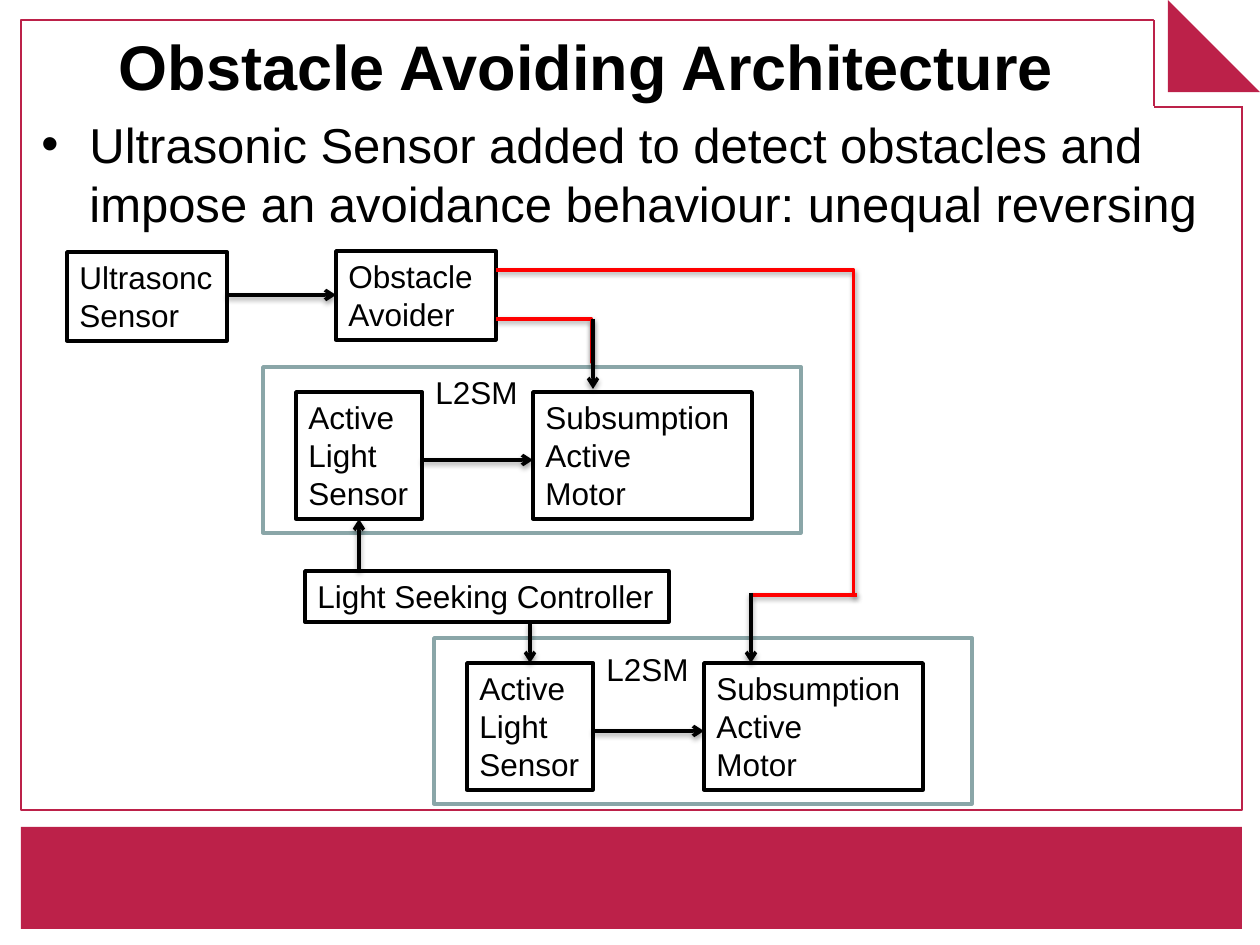
from dataclasses import dataclass

from lxml import etree
from pptx import Presentation
from pptx.dml.color import RGBColor
from pptx.enum.shapes import MSO_CONNECTOR, MSO_SHAPE
from pptx.enum.text import MSO_ANCHOR, MSO_AUTO_SIZE, PP_ALIGN
from pptx.oxml import parse_xml
from pptx.oxml.ns import nsdecls, qn
from pptx.util import Emu, Pt

RECT, CORNER = MSO_SHAPE.RECTANGLE, MSO_SHAPE.RIGHT_TRIANGLE
LINE, ELBOW = MSO_CONNECTOR.STRAIGHT, MSO_CONNECTOR.ELBOW
LEFT, CENTER = PP_ALIGN.LEFT, PP_ALIGN.CENTER
TOP, MIDDLE = MSO_ANCHOR.TOP, MSO_ANCHOR.MIDDLE
GROW, FIXED = MSO_AUTO_SIZE.SHAPE_TO_FIT_TEXT, MSO_AUTO_SIZE.NONE
SCALE = 914400 / 126


def px(n):
    return Emu(round(n * SCALE))


@dataclass(frozen=True)
class Theme:
    font: str = "Arial"
    ink: str = "000000"
    paper: str = "FFFFFF"
    brand: str = "BC2149"
    group: str = "8AA6A8"
    alert: str = "FF0000"
    title: int = 36
    body: int = 28
    label: int = 18
    thin: float = 0.75
    thick: float = 2


class Deck:
    def __init__(self, theme):
        self.theme = theme
        self.file = Presentation()
        self.file.slide_width, self.file.slide_height = px(1260), px(945)
        self.slide = self.file.slides.add_slide(self.file.slide_layouts[5])

    def text(self, frame, lines, size, bold=False, align=LEFT):
        for i, line in enumerate(lines):
            para = frame.paragraphs[0] if i == 0 else frame.add_paragraph()
            para.alignment = align
            run = para.add_run()
            run.text = line
            font = run.font
            font.name, font.size, font.bold = self.theme.font, Pt(size), bold
            font.color.rgb = RGBColor.from_string(self.theme.ink)

    def title(self, text, *at):
        shape = self.slide.shapes.title
        shape.left, shape.top, shape.width, shape.height = map(px, at)
        frame = shape.text_frame
        frame.auto_size, frame.vertical_anchor = FIXED, MIDDLE
        self.text(frame, [text], self.theme.title, True, CENTER)

    def bullet(self, text, *at):
        frame = self.slide.shapes.add_textbox(*map(px, at)).text_frame
        frame.word_wrap = True
        props = frame.paragraphs[0]._p.get_or_add_pPr()
        props.set("marL", str(px(48)))
        props.set("indent", str(-px(48)))
        etree.SubElement(props, qn("a:buFont")).set("typeface", self.theme.font)
        etree.SubElement(props, qn("a:buChar")).set("char", "•")
        self.text(frame, [text], self.theme.body)

    def shape(self, kind, *at, fill=None, line=None, width=Theme.thick):
        shape = self.slide.shapes.add_shape(kind, *map(px, at))
        shape.shadow.inherit = False
        if fill:
            shape.fill.solid()
            shape.fill.fore_color.rgb = RGBColor.from_string(fill)
        else:
            shape.fill.background()
        if line:
            shape.line.color.rgb = RGBColor.from_string(line)
            shape.line.width = Pt(width)
        else:
            shape.line.fill.background()
        return shape

    def fit(self, frame, lines):
        frame.word_wrap, frame.auto_size = False, GROW
        frame.vertical_anchor = TOP
        self.text(frame, lines, self.theme.label)

    def box(self, lines, *at):
        shape = self.shape(RECT, *at, fill=self.theme.paper, line=self.theme.ink)
        self.fit(shape.text_frame, lines)

    def label(self, text, *at):
        self.fit(self.slide.shapes.add_textbox(*map(px, at)).text_frame, [text])

    def line(self, *ends, kind=LINE, color=Theme.ink, width=Theme.thick,
             shade=True, bend=None):
        link = self.slide.shapes.add_connector(kind, *map(px, ends))
        link.line.color.rgb = RGBColor.from_string(color)
        link.line.width = Pt(width)
        props = link._element.spPr
        if bend:
            shape = props.find(qn("a:prstGeom"))
            guide = etree.SubElement(shape.find(qn("a:avLst")), qn("a:gd"))
            guide.set("name", "adj1")
            guide.set("fmla", f"val {bend}")
        shadow = ('<a:outerShdw blurRad="40000" dist="20000" dir="5400000" rotWithShape="0">'
                  f'<a:srgbClr val="{self.theme.ink}"><a:alpha val="38000"/></a:srgbClr>'
                  "</a:outerShdw>") if shade else ""
        props.append(parse_xml(f'<a:effectLst {nsdecls("a")}>{shadow}</a:effectLst>'))
        return props

    def arrow(self, *ends):
        props = self.line(*ends)
        tail = etree.SubElement(props.find(qn("a:ln")), qn("a:tailEnd"))
        tail.set("type", "arrow")

    def module(self, x, y, drop):
        """Light sensor driving a motor; drop moves the label down."""
        self.box(["Active", "Light", "Sensor"], x, y, 126, 127)
        self.box(["Subsumption", "Active", "Motor"], x + 237, y, 219, 127)
        self.arrow(x + 126, y + 68, x + 237, y + 68)
        self.shape(RECT, x - 33, y - 25, 538, 166, line=self.theme.group)
        self.label("L2SM", x + 127, y - 25 + drop, 108, 50)


def main():
    theme = Theme()
    deck = Deck(theme)

    # Page frame, folded corner and footer band
    deck.shape(RECT, 21, 20, 1221, 790, line=theme.brand, width=theme.thin)
    deck.shape(RECT, 1154, 0, 106, 106, fill=theme.paper)
    deck.shape(CORNER, 1168, 0, 92, 92, fill=theme.brand)
    deck.shape(RECT, 21, 827, 1221, 102, fill=theme.brand)
    for ends in ((1154, 20, 1154, 106), (1154, 107, 1242, 107)):
        deck.line(*ends, color=theme.brand, width=theme.thin, shade=False)

    # Heading and main point
    deck.title("Obstacle Avoiding Architecture", 29, 26, 1114, 79)
    deck.bullet("Ultrasonic Sensor added to detect obstacles and impose an "
                "avoidance behaviour: unequal reversing", 29, 108, 1201, 156)

    # Obstacle sensing
    deck.box(["Ultrasonc", "Sensor"], 67, 252, 160, 89)
    deck.box(["Obstacle", "Avoider"], 336, 251, 160, 89)
    deck.arrow(227, 295, 336, 295)

    # Two light-to-motor modules
    deck.module(296, 392, 0)
    deck.module(467, 663, 6)

    # Avoider overrides
    deck.line(496, 319, 593, 362, kind=ELBOW, color=theme.alert, bend=98500)
    deck.line(496, 270, 857, 595, kind=ELBOW, color=theme.alert, bend=99100)
    deck.line(857, 595, 752, 595, color=theme.alert)
    deck.arrow(593, 319, 593, 389)
    deck.arrow(751, 593, 751, 663)

    # Light seeking control
    deck.box(["Light Seeking Controller"], 305, 571, 364, 51)
    deck.arrow(359, 571, 359, 519)
    deck.arrow(530, 622, 530, 663)

    deck.file.save("out.pptx")


if __name__ == "__main__":
    main()
